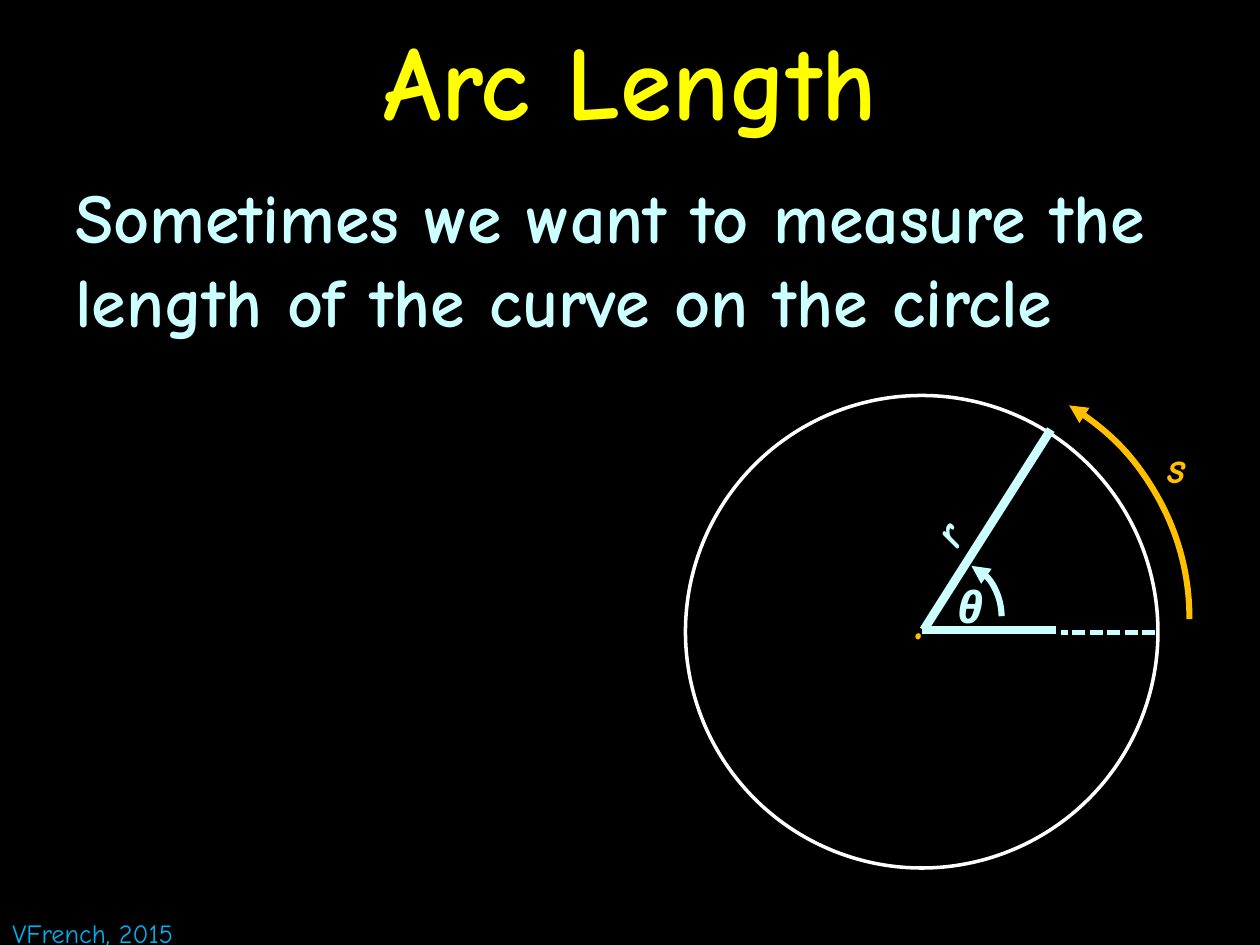
from lxml import etree
from pptx import Presentation
from pptx.dml.color import RGBColor
from pptx.enum.dml import MSO_LINE_DASH_STYLE as DASH
from pptx.enum.shapes import MSO_CONNECTOR, MSO_SHAPE
from pptx.enum.text import MSO_ANCHOR, PP_ALIGN
from pptx.oxml.ns import qn
from pptx.util import Pt

COLORS = {"black": "000000", "yellow": "FFFF00", "ice": "CCFFFF",
          "blue": "00B0F0", "white": "FFFFFF", "gold": "FFC000"}
FONT = "Comic Neue"


def add_text(text, box, size, color, wrap=True, **font_values):
    shape = slide.shapes.add_textbox(*map(Pt, box))
    shape.text_frame.word_wrap = wrap
    paragraph = shape.text_frame.paragraphs[0]
    run = paragraph.add_run()
    run.text = text
    run.font.color.rgb = RGBColor.from_string(COLORS[color])
    for name, value in {"name": FONT, "size": Pt(size), **font_values}.items():
        setattr(run.font, name, value)
    return shape


def style_line(shape, color, width):
    shape.line.color.rgb = RGBColor.from_string(COLORS[color])
    shape.line.width = Pt(width)


presentation = Presentation()
presentation.slide_width, presentation.slide_height = Pt(720), Pt(540)
slide = presentation.slides.add_slide(presentation.slide_layouts[6])
slide.background.fill.solid()
slide.background.fill.fore_color.rgb = RGBColor.from_string(COLORS["black"])

# Heading, sentence and credit
title = add_text("Arc Length", (0, 0, 720, 90), 60, "yellow", bold=True)
title.text_frame.vertical_anchor = MSO_ANCHOR.MIDDLE
title.text_frame.paragraphs[0].alignment = PP_ALIGN.CENTER
body = add_text("Sometimes we want to measure the length of the curve on the circle",
                (36, 95.8, 648, 444), 40, "ice", bold=True)
body.text_frame.paragraphs[0].space_before = Pt(8)
add_text("VFrench, 2015", (0, 520.6, 121.7, 25), 15, "blue", wrap=False)

# Circle and its centre dot
circle = slide.shapes.add_shape(MSO_SHAPE.OVAL, Pt(391.7), Pt(226), Pt(270), Pt(270))
circle.shadow.inherit = False
circle.fill.background()
style_line(circle, "white", 2)
add_text(".", (514.8, 321.8, 24.5, 55.4), 40, "gold", wrap=False)

# Radii: start, end, width, dash
for start, end, width, dash in [
    ((660.2, 361.4), (606.2, 361.4), 2.5, DASH.SQUARE_DOT),
    ((603.4, 360), (527, 360), 5, None),
    ((600.5, 245.5), (527.8, 360), 5, None),
]:
    radius = slide.shapes.add_connector(MSO_CONNECTOR.STRAIGHT, *map(Pt, start + end))
    style_line(radius, "ice", width)
    radius.line.dash_style = dash
    etree.SubElement(radius._element.spPr, qn("a:effectLst"))

# Arcs: box, start and end angle in degrees, colour
for box, angles, color in [
    ((522, 321.8, 50.4, 61.9), (285.1, 358.7), "ice"),
    ((388.8, 210.2, 290.9, 285.8), (302.3, 0.3), "gold"),
]:
    arc = slide.shapes.add_shape(MSO_SHAPE.ARC, *map(Pt, box))
    for index, angle in enumerate(angles):
        arc.adjustments[index] = angle * 0.6  # 60000 units per degree, scaled by 100000
    arc.shadow.inherit = False
    arc.fill.background()
    style_line(arc, color, 3.5)
    etree.SubElement(arc.line._get_or_add_ln(), qn("a:headEnd"), type="triangle")

# Labels: text, box, colour, rotation
for text, box, color, rotation in [
    ("θ", (540, 327.6, 36, 37.4), "ice", 0),
    ("s", (660.2, 247.7, 36, 37.4), "gold", 0),
    ("r", (523.4, 275, 51.8, 37.4), "ice", 302.9),
]:
    label = add_text(text, box, 25, color, bold=True, italic=True)
    label.rotation = rotation

presentation.save("out.pptx")
